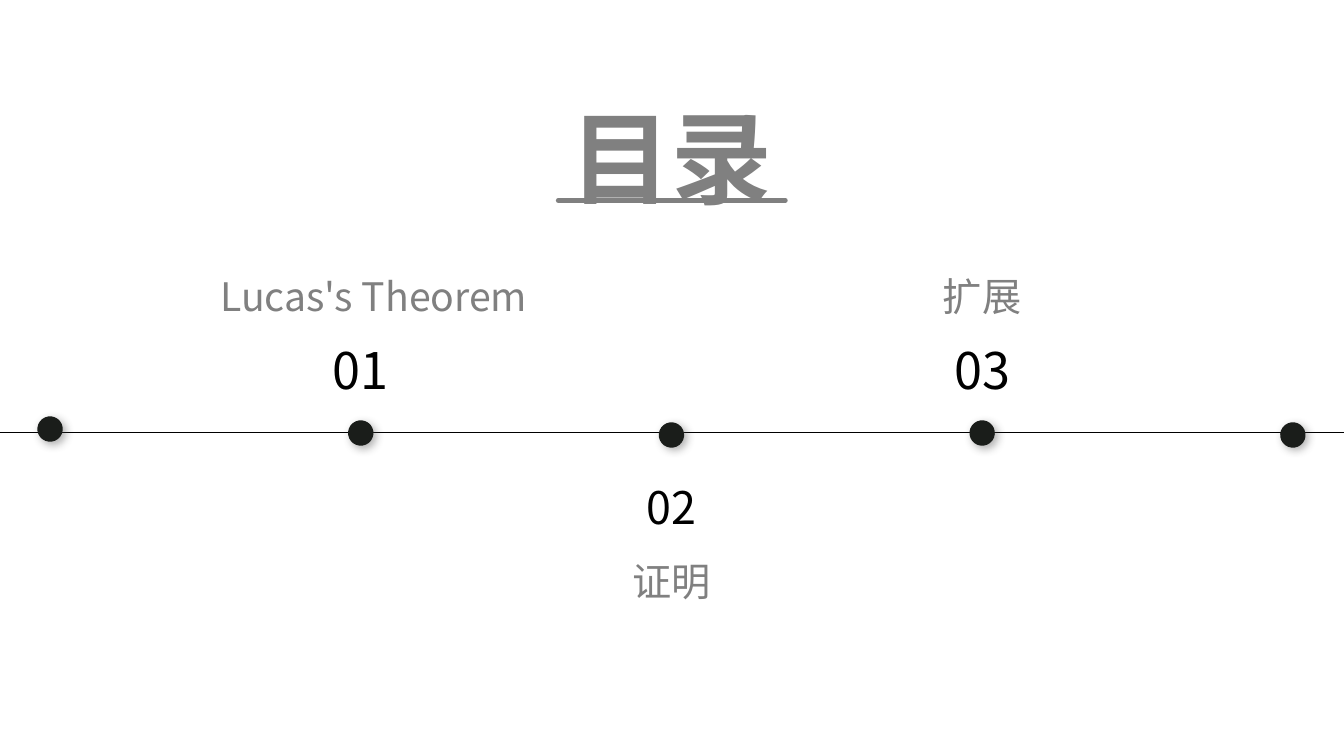
from dataclasses import dataclass
from lxml.etree import SubElement
from pptx import Presentation
from pptx.dml.color import RGBColor
from pptx.enum.shapes import MSO_CONNECTOR, MSO_SHAPE
from pptx.enum.text import MSO_ANCHOR, PP_ALIGN
from pptx.oxml import parse_xml
from pptx.oxml.ns import nsdecls, qn
from pptx.util import Cm, Pt

TITLE = "目录"
TOPICS = [
    dict(num="01", label="Lucas's Theorem", dot=1, size=36, top=8.43, below=6.73, shift=0.33, wide=8.48),
    dict(num="02", label="证明", dot=2, size=32, top=11.96, below=13.92, shift=0, wide=9.2),
    dict(num="03", label="扩展", dot=3, size=36, top=8.43, below=6.73, shift=0, wide=9.2),
]
DOTS = [10.81, 10.91, 10.96, 10.91, 10.96]


@dataclass
class Theme:
    font: str = "Noto Sans CJK SC"
    gray: str = "808080"
    black: str = "000000"
    dot: str = "1A1D1A"
    title: int = 72
    label: int = 28


theme = Theme()
WIDE, HIGH = 33.87, 19.05
START, STEP, SIZE = 1.26, 7.83, 0.64
AXIS = 10.9

SHADOW = (
    f'<a:outerShdw {nsdecls("a")} blurRad="76200" dist="38100" dir="2700000" '
    'algn="tl" rotWithShape="0"><a:srgbClr val="404040">'
    '<a:alpha val="40000"/></a:srgbClr></a:outerShdw>'
)


def write(shape, text, size, color, bold=False, space=None, anchor=MSO_ANCHOR.TOP):
    frame = shape.text_frame
    frame.word_wrap = True
    frame.vertical_anchor = anchor
    para = frame.paragraphs[0]
    para.alignment = PP_ALIGN.CENTER
    if space:
        para.line_spacing = space
    run = para.add_run()
    run.text = text
    font = run.font
    font.name, font.size, font.bold = theme.font, Pt(size), bold
    font.color.rgb = RGBColor.from_string(color)
    SubElement(font._element, qn("a:ea")).set("typeface", theme.font)


def box(slide, mid, top, wide, high):
    return slide.shapes.add_textbox(Cm(mid - wide / 2), Cm(top), Cm(wide), Cm(high))


def rule(slide, left, right, y, color, width, cap="flat"):
    line = slide.shapes.add_connector(
        MSO_CONNECTOR.STRAIGHT, Cm(left), Cm(y), Cm(right), Cm(y))
    line.line.color.rgb = RGBColor.from_string(color)
    line.line.width = Pt(width)
    props = line._element.spPr
    props.find(qn("a:ln")).set("cap", cap)
    SubElement(props, qn("a:effectLst"))


def add_dot(slide, mid, y):
    dot = slide.shapes.add_shape(
        MSO_SHAPE.OVAL, Cm(mid - SIZE / 2), Cm(y - SIZE / 2), Cm(SIZE), Cm(SIZE))
    dot.rotation = 186.2
    dot.fill.solid()
    dot.fill.fore_color.rgb = RGBColor.from_string(theme.dot)
    dot.line.fill.background()
    dot.shadow.inherit = False
    dot._element.spPr.find(qn("a:effectLst")).append(parse_xml(SHADOW))


def main():
    deck = Presentation()
    deck.slide_width, deck.slide_height = Cm(WIDE), Cm(HIGH)
    slide = deck.slides.add_slide(deck.slide_layouts[5])

    title = slide.shapes.title
    title.left, title.top, title.width, title.height = Cm(10.67), Cm(1.02), Cm(12.5), Cm(4.32)
    write(title, TITLE, theme.title, theme.gray, bold=True, space=1.5, anchor=MSO_ANCHOR.MIDDLE)
    rule(slide, 14.07, 19.79, 5.05, theme.gray, 3.5, cap="rnd")

    rule(slide, 0, WIDE, AXIS, theme.black, 0.75)
    for i, y in enumerate(DOTS):
        add_dot(slide, START + i * STEP, y)

    for topic in TOPICS:
        mid = START + topic["dot"] * STEP
        write(box(slide, mid, topic["top"], 4.9, topic["size"] * 0.05),
              topic["num"], topic["size"], theme.black)
        write(box(slide, mid + topic["shift"], topic["below"], topic["wide"], 1.45),
              topic["label"], theme.label, theme.gray)

    deck.save("out.pptx")


if __name__ == "__main__":
    main()
